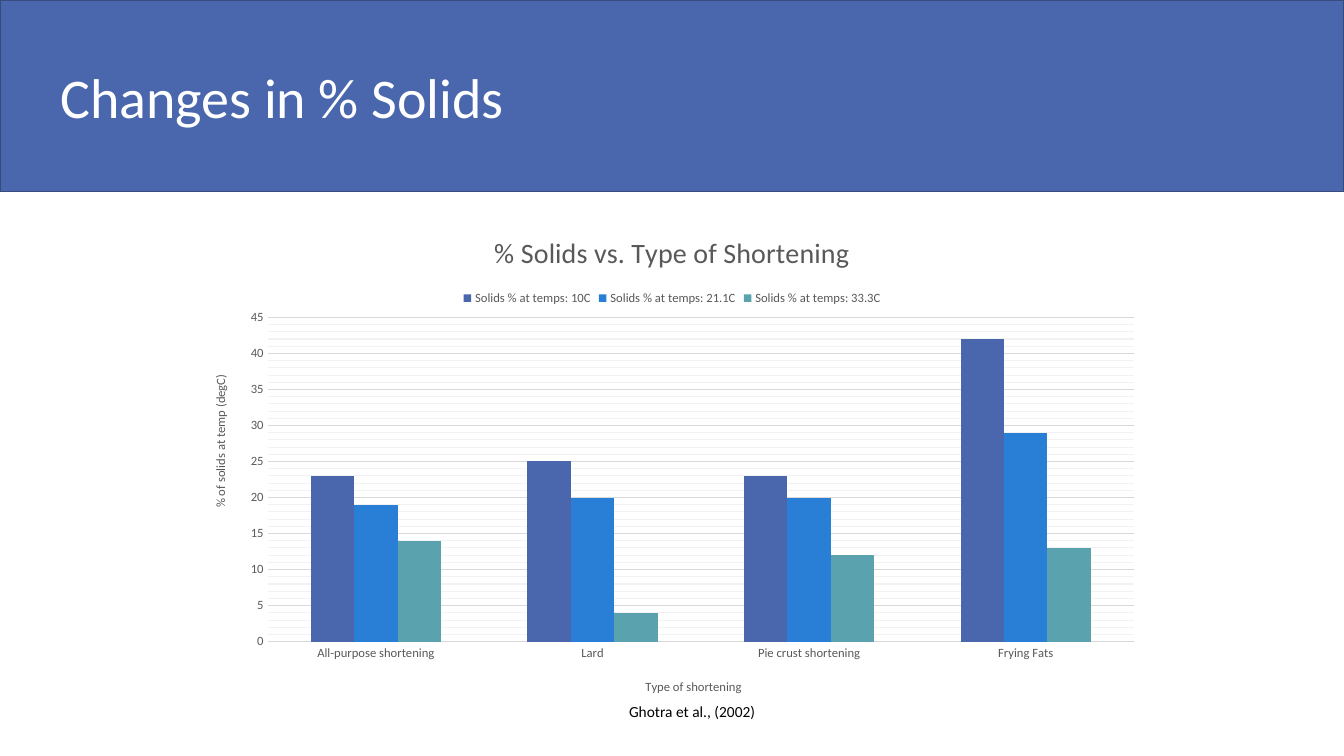
from lxml import etree
from pptx import Presentation
from pptx.chart.data import CategoryChartData
from pptx.dml.color import RGBColor
from pptx.enum.chart import XL_CHART_TYPE, XL_LEGEND_POSITION, XL_TICK_MARK
from pptx.enum.text import MSO_ANCHOR, MSO_AUTO_SIZE, PP_ALIGN
from pptx.oxml.ns import qn
from pptx.util import Inches, Pt

COLUMNS = XL_CHART_TYPE.COLUMN_CLUSTERED
LEGEND_TOP = XL_LEGEND_POSITION.TOP
NO_TICKS = XL_TICK_MARK.NONE
MIDDLE = MSO_ANCHOR.MIDDLE
NO_AUTOFIT = MSO_AUTO_SIZE.NONE
LEFT = PP_ALIGN.LEFT

FONT = "Calibri"
BLUE, WHITE, BLACK, GREY = "4A66AC", "FFFFFF", "000000", "595959"
GRID, MINOR_GRID = "D9D9D9", "F2F2F2"

SHORTENINGS = ["All-purpose shortening", "Lard", "Pie crust shortening", "Frying Fats"]
SOLIDS = [
    ("Solids % at temps: 10C", [23, 25, 23, 42], BLUE),
    ("Solids % at temps: 21.1C", [19, 20, 20, 29], "297FD5"),
    ("Solids % at temps: 33.3C", [14, 4, 12, 13], "5AA2AE"),
]


def rgb(value):
    return RGBColor.from_string(value)


def style_font(font, size, color):
    font.name = FONT
    font.size = Pt(size)
    font.bold = False
    font.color.rgb = rgb(color)


def style_line(line, color, width=0.75):
    line.color.rgb = rgb(color)
    line.width = Pt(width)


def write(text_frame, text, size, color):
    text_frame.text = text
    for span in text_frame.paragraphs[0].runs:
        style_font(span.font, size, color)


def place_part(element, position, **settings):
    """Give a chart part a manual layout, as fractions of the chart."""
    for old in element.findall(qn("c:layout")):
        element.remove(old)
    layout = etree.Element(qn("c:layout"))
    manual = etree.SubElement(layout, qn("c:manualLayout"))
    for name, value in settings.items():
        etree.SubElement(manual, qn(f"c:{name}")).set("val", str(value))
    element.insert(position, layout)


def add_minor_gridlines(axis, color):
    axis.has_minor_gridlines = True
    gridlines = axis._element.find(qn("c:minorGridlines"))
    properties = etree.SubElement(gridlines, qn("c:spPr"))
    line = etree.SubElement(properties, qn("a:ln"), w=str(Pt(0.75)))
    fill = etree.SubElement(line, qn("a:solidFill"))
    etree.SubElement(fill, qn("a:srgbClr"), val=color)


def add_banner(page, text):
    banner = page.shapes.title
    banner.left, banner.top = Inches(0), Inches(0)
    banner.width, banner.height = Inches(13.33), Inches(1.9)
    banner.fill.solid()
    banner.fill.fore_color.rgb = rgb(BLUE)
    style_line(banner.line, "374B7F", 1)
    frame = banner.text_frame
    write(frame, text, 40, WHITE)
    frame.auto_size = NO_AUTOFIT
    frame.vertical_anchor = MIDDLE
    frame.margin_left = Inches(0.6)
    frame.paragraphs[0].alignment = LEFT


def style_axis(axis, title, x, y):
    write(axis.axis_title.text_frame, title, 9, GREY)
    place_part(axis.axis_title._element, 1, xMode="edge", yMode="edge", x=x, y=y)
    axis.major_tick_mark = axis.minor_tick_mark = NO_TICKS
    style_font(axis.tick_labels.font, 9, GREY)


def add_solids_chart(page):
    data = CategoryChartData()
    data.categories = SHORTENINGS
    for name, values, _ in SOLIDS:
        data.add_series(name, values)
    chart = page.shapes.add_chart(
        COLUMNS, Inches(1.89), Inches(2.11), Inches(9.55), Inches(4.95), data
    ).chart
    style_font(chart.font, 10, BLACK)
    write(chart.chart_title.text_frame, "% Solids vs. Type of Shortening", 20, GREY)
    chart.has_legend = True
    chart.legend.position = LEGEND_TOP
    chart.legend.include_in_layout = False
    style_font(chart.legend.font, 9, GREY)

    plot = chart.plots[0]
    plot.gap_width = 199
    plot.overlap = 0
    plot.vary_by_categories = False
    for series, (_, _, color) in zip(plot.series, SOLIDS):
        series.format.fill.solid()
        series.format.fill.fore_color.rgb = rgb(color)

    types, percents = chart.category_axis, chart.value_axis
    style_axis(types, "Type of shortening", 0.47, 0.93)
    style_line(types.format.line, GRID)
    style_axis(percents, "% of solids at temp (degC)", 0.02, 0.32)
    percents.format.line.fill.background()
    percents.minimum_scale, percents.maximum_scale = 0, 45
    percents.major_unit, percents.minor_unit = 5, 1
    style_line(percents.major_gridlines.format.line, GRID)
    add_minor_gridlines(percents, MINOR_GRID)

    plot_area = chart._chartSpace.find(".//" + qn("c:plotArea"))
    place_part(plot_area, 0, layoutTarget="inner", xMode="edge", yMode="edge",
               x=0.08, y=0.21, w=0.9, h=0.65)


def add_citation(page, text):
    box = page.shapes.add_textbox(Inches(6.14), Inches(6.92), Inches(1.49), Inches(0.29))
    write(box.text_frame, text, 11, BLACK)


def main():
    deck = Presentation()
    deck.slide_width, deck.slide_height = Inches(13.33), Inches(7.5)
    page = deck.slides.add_slide(deck.slide_layouts.get_by_name("Title Only"))
    add_banner(page, "Changes in % Solids")
    add_solids_chart(page)
    add_citation(page, "Ghotra et al., (2002)")
    deck.save("out.pptx")


if __name__ == "__main__":
    main()
